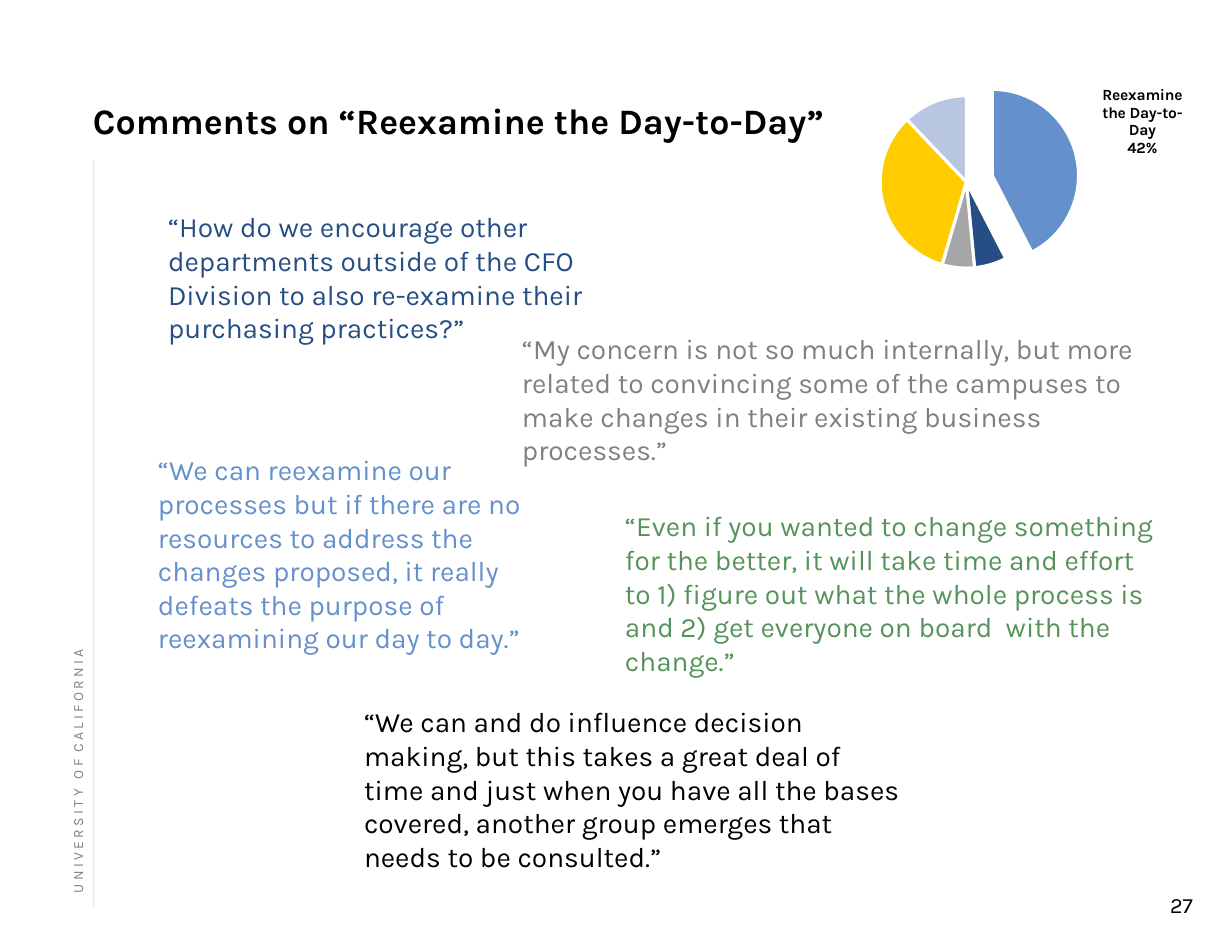
from lxml import etree
from pptx import Presentation
from pptx.chart.data import CategoryChartData
from pptx.dml.color import RGBColor
from pptx.enum.chart import XL_CHART_TYPE, XL_LABEL_POSITION
from pptx.enum.shapes import MSO_CONNECTOR
from pptx.enum.text import MSO_ANCHOR, PP_ALIGN
from pptx.oxml import parse_xml
from pptx.oxml.ns import nsdecls, qn
from pptx.util import Emu, Pt

PIE = XL_CHART_TYPE.PIE
OUTSIDE = XL_LABEL_POSITION.OUTSIDE_END
STRAIGHT = MSO_CONNECTOR.STRAIGHT
TOP, BOTTOM = MSO_ANCHOR.TOP, MSO_ANCHOR.BOTTOM
LEFT, RIGHT = PP_ALIGN.LEFT, PP_ALIGN.RIGHT

EMU_PER_PX = 914400 / 112
FONT = "Karla"
COLORS = {
    "black": "000000", "white": "FFFFFF", "grey": "808080", "silver": "A6A6A6",
    "navy": "264E84", "blue": "6490CB", "pale": "B8C6E2",
    "green": "55935A", "yellow": "FFCC00",
}


def px(length):
    return Emu(round(length * EMU_PER_PX))


def color(name):
    return RGBColor.from_string(COLORS[name])


def style_font(font, size, ink="black", bold=False):
    font.name, font.size, font.bold = FONT, Pt(size), bold
    font.color.rgb = color(ink)


def write(shape, text, size=18, ink="black", bold=False, align=LEFT, anchor=TOP,
          insets=(11, 6, 11, 6), line_spacing=None, indent=0):
    frame = shape.text_frame
    frame.word_wrap = True
    frame.vertical_anchor = anchor
    (frame.margin_left, frame.margin_top,
     frame.margin_right, frame.margin_bottom) = map(px, insets)
    paragraph = frame.paragraphs[0]
    paragraph.alignment = align
    if line_spacing:
        paragraph.line_spacing = Pt(line_spacing)
    if indent:
        properties = paragraph._p.get_or_add_pPr()
        properties.set("marL", str(px(indent)))
        properties.set("indent", "0")
    run = paragraph.add_run()
    run.text = text
    style_font(run.font, size, ink, bold)


class CommentSlide:
    def __init__(self, deck):
        self.slide = deck.slides.add_slide(deck.slide_layouts[5])
        self.shapes = self.slide.shapes

    def title(self, text, box):
        title = self.shapes.title
        title.left, title.top, title.width, title.height = map(px, box)
        write(title, text, size=23, bold=True, anchor=BOTTOM,
              insets=(0, 0, 0, 0), line_spacing=27.9)

    def text(self, text, box, rotation=0, **style):
        label = self.shapes.add_textbox(*map(px, box))
        label.rotation = rotation
        write(label, text, **style)

    def quote(self, text, ink, box):
        self.text(text, box, ink=ink, insets=(11, 5, 4, 4), indent=26)

    def rule(self, x, top, bottom, opacity):
        rule = self.shapes.add_connector(STRAIGHT, px(x), px(top), px(x), px(bottom))
        rule.line.color.rgb = color("navy")
        rule.line.width = Pt(0.35)
        ink = rule._element.spPr.find(".//" + qn("a:srgbClr"))
        etree.SubElement(ink, qn("a:alpha")).set("val", str(opacity * 1000))
        etree.SubElement(rule._element.spPr, qn("a:effectLst"))

    def pie(self, theme, shares, box, plot_area, explosion, label_shift):
        data = CategoryChartData(number_format="0%")
        data.categories = [theme] + [""] * (len(shares) - 1)
        data.add_series("", [value for value, _ in shares])
        chart = self.shapes.add_chart(PIE, *map(px, box), data).chart
        chart.has_legend = chart.has_title = False
        style_font(chart.font, 18)
        plot = chart.plots[0]
        plot.vary_by_categories = False
        series = plot.series[0]

        for index, (_, fill) in enumerate(shares):
            slice_format = series.points[index].format
            slice_format.fill.solid()
            slice_format.fill.fore_color.rgb = color(fill)
            slice_format.line.color.rgb = color("white")
            slice_format.line.width = Pt(2)

        # First slice pulled out
        first_slice = series._element.find(qn("c:dPt"))
        first_slice.find(qn("c:spPr")).addprevious(parse_xml(
            f'<c:explosion {nsdecls("c")} val="{explosion}"/>'))

        # Label on the first slice only, without a leader line
        series.data_labels.show_value = False
        label = series.points[0].data_label
        style_font(label.font, 10, bold=True)
        label.position = OUTSIDE
        labels_xml = series._element.find(qn("c:dLbls"))
        leader = labels_xml.find(qn("c:showLeaderLines"))
        if leader is None:
            leader = etree.SubElement(labels_xml, qn("c:showLeaderLines"))
        leader.set("val", "0")
        label_xml = labels_xml.find(qn("c:dLbl"))
        label_xml.find(qn("c:showCatName")).set("val", "1")
        label_xml.find(qn("c:showPercent")).set("val", "0")
        etree.SubElement(label_xml, qn("c:separator")).text = "\n"
        label_xml.find(qn("c:idx")).addnext(self.layout(zip("xy", label_shift)))

        # Plot area placed by fractions of the chart
        plot_xml = chart._chartSpace.find(".//" + qn("c:plotArea"))
        for old in plot_xml.findall(qn("c:layout")):
            plot_xml.remove(old)
        plot_xml.insert(0, self.layout(zip("xywh", plot_area), inner=True))

    @staticmethod
    def layout(fractions, inner=False):
        mode = ""
        if inner:
            mode = ('<c:layoutTarget val="inner"/>'
                    '<c:xMode val="edge"/><c:yMode val="edge"/>')
        values = "".join(f'<c:{side} val="{value}"/>' for side, value in fractions)
        return parse_xml(f'<c:layout {nsdecls("c")}><c:manualLayout>'
                         f'{mode}{values}</c:manualLayout></c:layout>')


QUOTES = [
    ("“My concern is not so much internally, but more related to convincing some of "
     "the campuses to make changes in their existing business processes.”",
     "grey", (485, 327, 653, 159)),
    ("“Even if you wanted to change something for the better, it will take time and "
     "effort to 1) figure out what the whole process is and 2) get everyone on board "
     " with the change.”",
     "green", (588, 504, 579, 177)),
    ("“We can and do influence decision making, but this takes a great deal of time "
     "and just when you have all the bases covered, another group emerges that needs "
     "to be consulted.”",
     "black", (327, 700, 579, 177)),
    ("“How do we encourage other departments outside of the CFO Division to also "
     "re-examine their purchasing practices?”",
     "navy", (131, 205, 476, 233)),
    ("“We can reexamine our processes but if there are no resources to address the "
     "changes proposed, it really defeats the purpose of reexamining our day to day.”",
     "blue", (121, 448, 420, 233)),
]

SHARES = [(0.42, "blue"), (0.06, "navy"), (0.06, "silver"),
          (0.33, "yellow"), (0.12, "pale")]


def main():
    deck = Presentation()
    deck.slide_width, deck.slide_height = px(1232), px(952)
    page = CommentSlide(deck)

    # Page frame
    page.rule(94, 161, 907, opacity=35)
    page.text("27", (1148, 886, 56, 37), size=14, align=RIGHT)
    page.text("U N I V E R S I T Y   O F  C A L I F O R N I A", (-165, 642, 485, 17),
              rotation=270, size=9, ink="grey", anchor=BOTTOM,
              insets=(0, 0, 0, 0), line_spacing=12)

    # Title and comments
    page.title("Comments on “Reexamine the Day-to-Day”", (93, 106, 1064, 36))
    for text, ink, box in QUOTES:
        page.quote(text, ink, box)

    # Share of comments on this theme
    page.pie("Reexamine the Day-to-Day", SHARES, (709, 28, 495, 308),
             plot_area=(0.3, 0.22, 0.44, 0.56), explosion=31, label_shift=(0.04, 0.01))

    deck.save("out.pptx")


if __name__ == "__main__":
    main()
